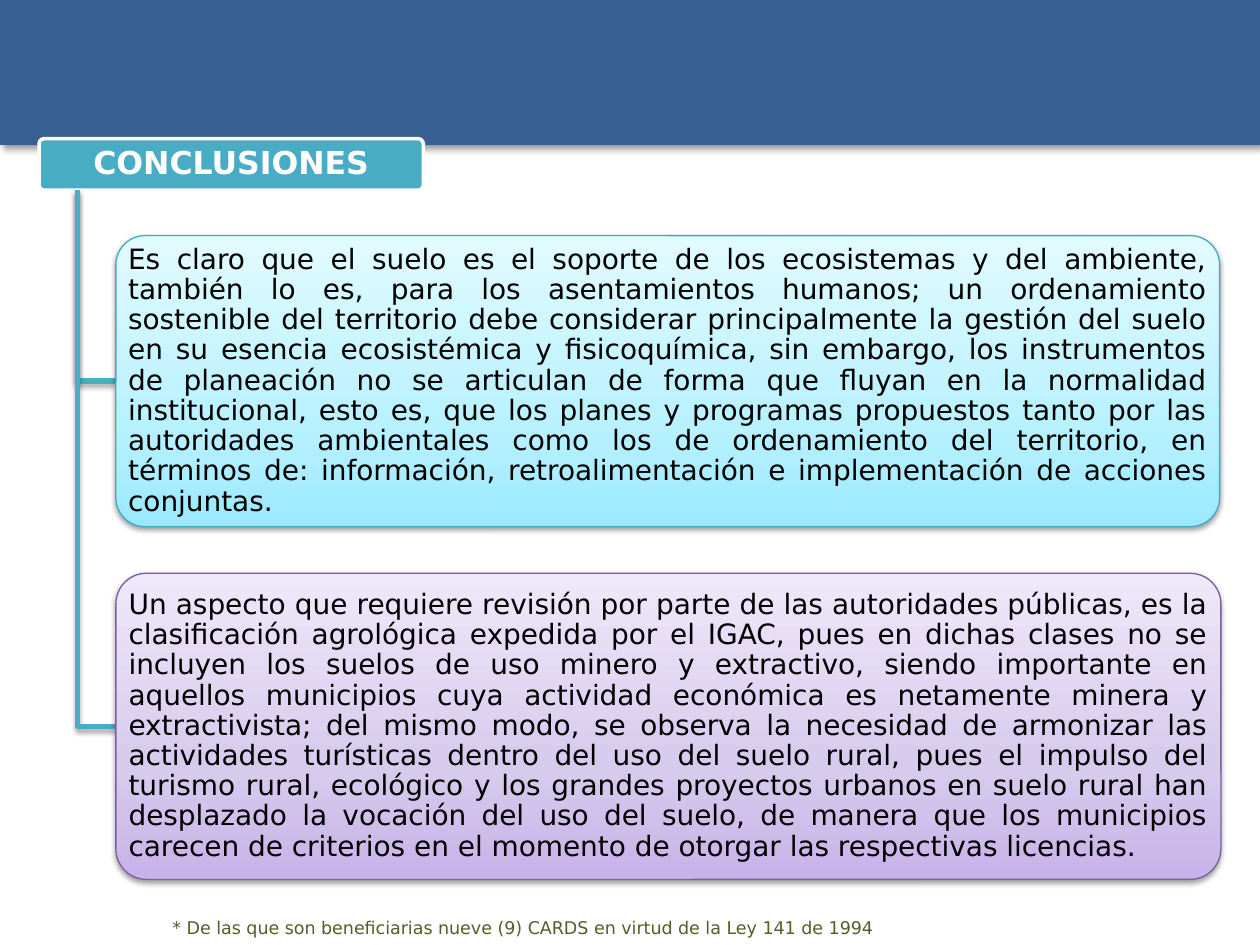
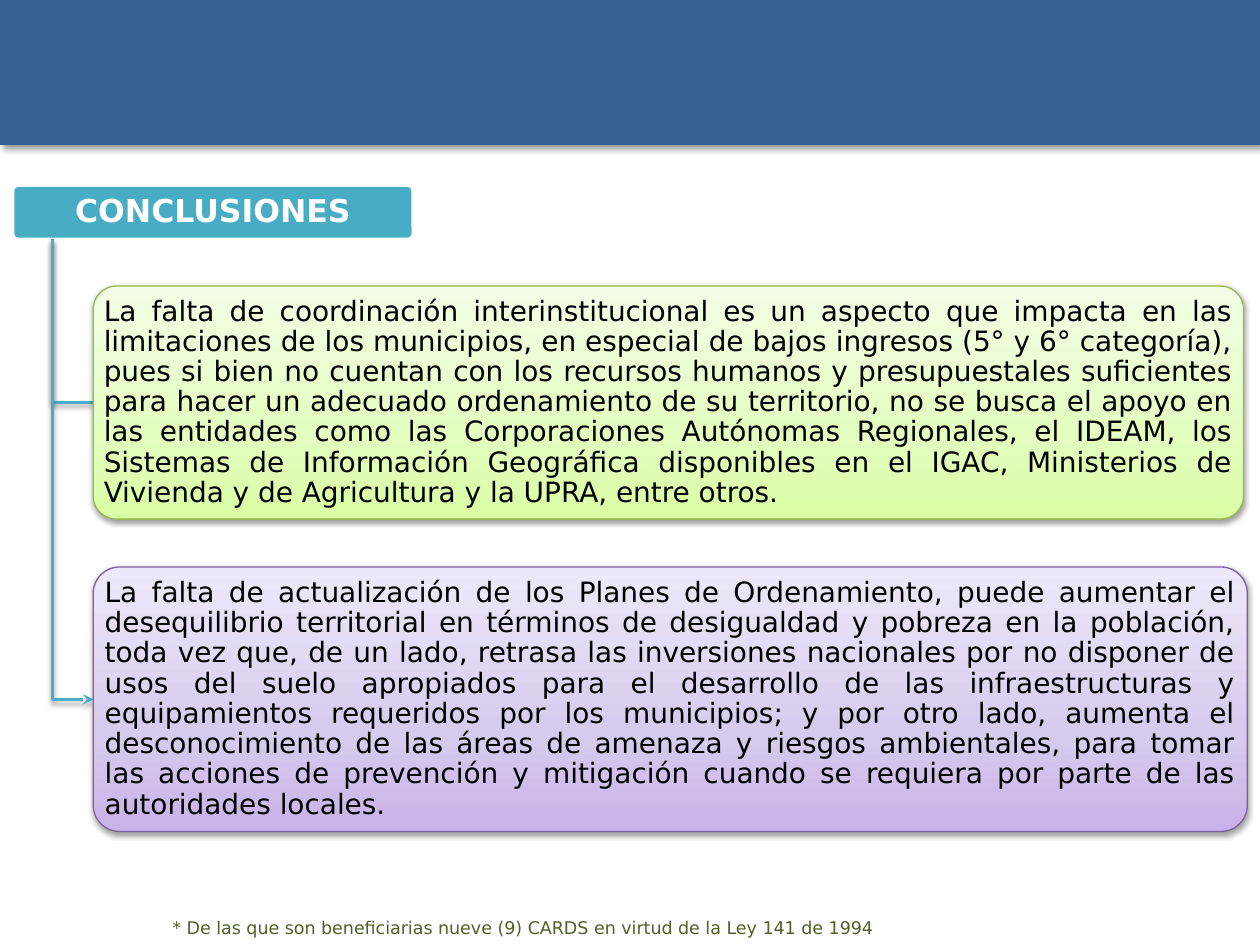
from pptx import Presentation
from pptx.dml.color import RGBColor
from pptx.enum.shapes import MSO_SHAPE
from pptx.enum.text import MSO_ANCHOR, PP_ALIGN
from pptx.oxml import parse_xml
from pptx.oxml.ns import nsdecls
from pptx.util import Inches, Pt

RECT = MSO_SHAPE.RECTANGLE
ROUNDED = MSO_SHAPE.ROUNDED_RECTANGLE
TOP, MIDDLE = MSO_ANCHOR.TOP, MSO_ANCHOR.MIDDLE
LEFT, CENTER, JUSTIFY = PP_ALIGN.LEFT, PP_ALIGN.CENTER, PP_ALIGN.JUSTIFY

FONT = "DejaVu Sans"
BAND, TITLE_FILL, BRANCH = "366092", "49ACC5", "4BACC6"
WHITE, BLACK, NOTE = "FFFFFF", "000000", "4F6128"
AQUA = ("9BE9FF", "B8F1FF", "E2FBFF"), "45A9C4"
PURPLE = ("C8B2E9", "D6CAED", "EFE8FA"), "7C5F9F"
GREEN = ("DAFEA4", "E3FEBF", "F4FEE6"), "97B853"
GRADIENT_STOPS = (0, 35, 100)

TITLE = "CONCLUSIONES"
FOOTNOTE = "* De las que son beneficiarias nueve (9) CARDS en virtud de la Ley 141 de 1994"
SOIL = (
    "Es claro que el suelo es el soporte de los ecosistemas y del ambiente, también lo es, "
    "para los asentamientos humanos; un ordenamiento sostenible del territorio debe considerar "
    "principalmente la gestión del suelo en su esencia ecosistémica y fisicoquímica, sin embargo, "
    "los instrumentos de planeación no se articulan de forma que fluyan en la normalidad "
    "institucional, esto es, que los planes y programas propuestos tanto por las autoridades "
    "ambientales como los de ordenamiento del territorio, en términos de: información, "
    "retroalimentación e implementación de acciones conjuntas."
)
LAND_CLASSES = (
    "Un aspecto que requiere revisión por parte de las autoridades públicas, es la clasificación "
    "agrológica expedida por el IGAC, pues en dichas clases no se incluyen los suelos de uso "
    "minero y extractivo, siendo importante en aquellos municipios cuya actividad económica es "
    "netamente minera y extractivista; del mismo modo, se observa la necesidad de armonizar las "
    "actividades turísticas dentro del uso del suelo rural, pues el impulso del turismo rural, "
    "ecológico y los grandes proyectos urbanos en suelo rural han desplazado la vocación del uso "
    "del suelo, de manera que los municipios carecen de criterios en el momento de otorgar las "
    "respectivas licencias."
)
COORDINATION = (
    "La falta de coordinación interinstitucional es un aspecto que impacta en las limitaciones de "
    "los municipios, en especial de bajos ingresos (5° y 6° categoría), pues si bien no cuentan "
    "con los recursos humanos y presupuestales suficientes para hacer un adecuado ordenamiento de "
    "su territorio, no se busca el apoyo en las entidades como las Corporaciones Autónomas "
    "Regionales, el IDEAM, los Sistemas de Información Geográfica disponibles en el IGAC, "
    "Ministerios de Vivienda y de Agricultura y la UPRA, entre otros."
)
OUTDATED_PLANS = (
    "La falta de actualización de los Planes de Ordenamiento, puede aumentar el desequilibrio "
    "territorial en términos de desigualdad y pobreza en la población, toda vez que, de un lado, "
    "retrasa las inversiones nacionales por no disponer de usos del suelo apropiados para el "
    "desarrollo de las infraestructuras y equipamientos requeridos por los municipios; y por otro "
    "lado, aumenta el desconocimiento de las áreas de amenaza y riesgos ambientales, para tomar "
    "las acciones de prevención y mitigación cuando se requiera por parte de las autoridades "
    "locales."
)


def rgb(color):
    """Turn a hex string into a colour."""
    return RGBColor.from_string(color)


def set_shadow(sp, alpha, blur, dist, angle):
    """Give a shape a soft black outer shadow."""
    sp.shadow.inherit = False
    sp._element.spPr.find("{*}effectLst").append(parse_xml(
        f'<a:outerShdw {nsdecls("a")} blurRad="{Pt(blur)}" dist="{Pt(dist)}" '
        f'dir="{angle * 60000}" algn="ctr" rotWithShape="0"><a:srgbClr val="{BLACK}">'
        f'<a:alpha val="{alpha * 1000}"/></a:srgbClr></a:outerShdw>'))


def set_gradient(sp, colors):
    """Fill a shape with a gradient running from bottom to top."""
    stops = "".join(
        f'<a:gs pos="{pos * 1000}"><a:srgbClr val="{color}"/></a:gs>'
        for pos, color in zip(GRADIENT_STOPS, colors))
    sp._element.spPr.insert(2, parse_xml(
        f'<a:gradFill {nsdecls("a")} rotWithShape="1"><a:gsLst>{stops}</a:gsLst>'
        '<a:lin ang="16200000" scaled="0"/></a:gradFill>'))


def set_line(sp, color, width):
    """Set the outline of a shape."""
    sp.line.color.rgb = rgb(color)
    sp.line.width = Pt(width)


def write(sp, text, size, color, align, anchor, insets, bold=False, spacing=None):
    """Write one paragraph into a shape or text box."""
    tf = sp.text_frame
    tf.word_wrap = True
    tf.vertical_anchor = anchor
    tf.margin_left = tf.margin_right = Inches(insets[0])
    tf.margin_top = tf.margin_bottom = Inches(insets[1])
    p = tf.paragraphs[0]
    p.alignment = align
    p.line_spacing = spacing
    r = p.add_run()
    r.text = text
    r.font.name, r.font.size, r.font.bold = FONT, Pt(size), bold
    r.font.color.rgb = rgb(color)


def add_box(s, shape, at):
    """Add a preset shape without shadow, placed in inches."""
    sp = s.shapes.add_shape(shape, *map(Inches, at))
    sp.shadow.inherit = False
    if shape == ROUNDED:
        sp.adjustments[0] = 0.1
    return sp


def add_band(s):
    """Add the blue band across the top."""
    sp = add_box(s, RECT, (0, 0, 10, 1.15))
    sp.fill.solid()
    sp.fill.fore_color.rgb = rgb(BAND)
    sp.line.fill.background()
    set_shadow(sp, 40, 4, 3, 45)


def add_title(s, at):
    """Add the root box of the tree."""
    sp = add_box(s, ROUNDED, at)
    sp.fill.solid()
    sp.fill.fore_color.rgb = rgb(TITLE_FILL)
    set_line(sp, WHITE, 2)
    write(sp, TITLE, 18, WHITE, CENTER, MIDDLE, (0.04, 0.02), bold=True, spacing=0.9)


def add_branch(s, start, end, width, arrow):
    """Add an elbow line going down from the title and right to a conclusion."""
    (x1, y1), (x2, y2) = [tuple(map(Inches, point)) for point in (start, end)]
    builder = s.shapes.build_freeform(x1, y1)
    builder.add_line_segments([(x1, y2), (x2, y2)], close=False)
    sp = builder.convert_to_shape()
    sp.fill.background()
    set_line(sp, BRANCH, width)
    if arrow:
        sp.line._get_or_add_ln().append(
            parse_xml(f'<a:tailEnd {nsdecls("a")} type="stealth"/>'))
    set_shadow(sp, 35, 3.1, 1.8, 90)


def add_conclusion(s, at, text, colors):
    """Add a rounded box holding one conclusion."""
    gradient, outline = colors
    sp = add_box(s, ROUNDED, at)
    set_line(sp, outline, 0.75)
    set_gradient(sp, gradient)
    set_shadow(sp, 38, 3.1, 1.6, 90)
    write(sp, text, 16, BLACK, JUSTIFY, MIDDLE, (0.03, 0.02), spacing=0.9)


def add_footnote(s):
    """Add the note at the foot of the slide."""
    sp = s.shapes.add_textbox(*map(Inches, (1.27, 7.23, 5.93, 0.27)))
    write(sp, FOOTNOTE, 10, NOTE, LEFT, TOP, (0.1, 0.05))


def add_tree_slide(prs, title_at, conclusions, line_width, last_arrow=False):
    """Add a slide with a title branching to its conclusions."""
    s = prs.slides.add_slide(prs.slide_layouts[6])
    add_band(s)
    add_title(s, title_at)
    left, top, width, height = title_at
    start = left + width / 10, top + height
    for at, text, colors in conclusions:
        end = at[0], at[1] + at[3] / 2
        arrow = last_arrow and text == conclusions[-1][1]
        add_branch(s, start, end, line_width, arrow)
        add_conclusion(s, at, text, colors)
    add_footnote(s)


def main():
    """Build and save the presentation."""
    prs = Presentation()
    prs.slide_width, prs.slide_height = Inches(10), Inches(7.5)
    add_tree_slide(prs, (0.31, 1.1, 3.05, 0.41), [
        ((0.92, 1.87, 8.76, 2.31), SOIL, AQUA),
        ((0.92, 4.55, 8.77, 2.43), LAND_CLASSES, PURPLE),
    ], 3)
    add_tree_slide(prs, (0.1, 1.47, 3.18, 0.43), [
        ((0.74, 2.27, 9.13, 1.85), COORDINATION, GREEN),
        ((0.74, 4.5, 9.16, 2.1), OUTDATED_PLANS, PURPLE),
    ], 2, last_arrow=True)
    prs.save("out.pptx")


if __name__ == "__main__":
    main()
